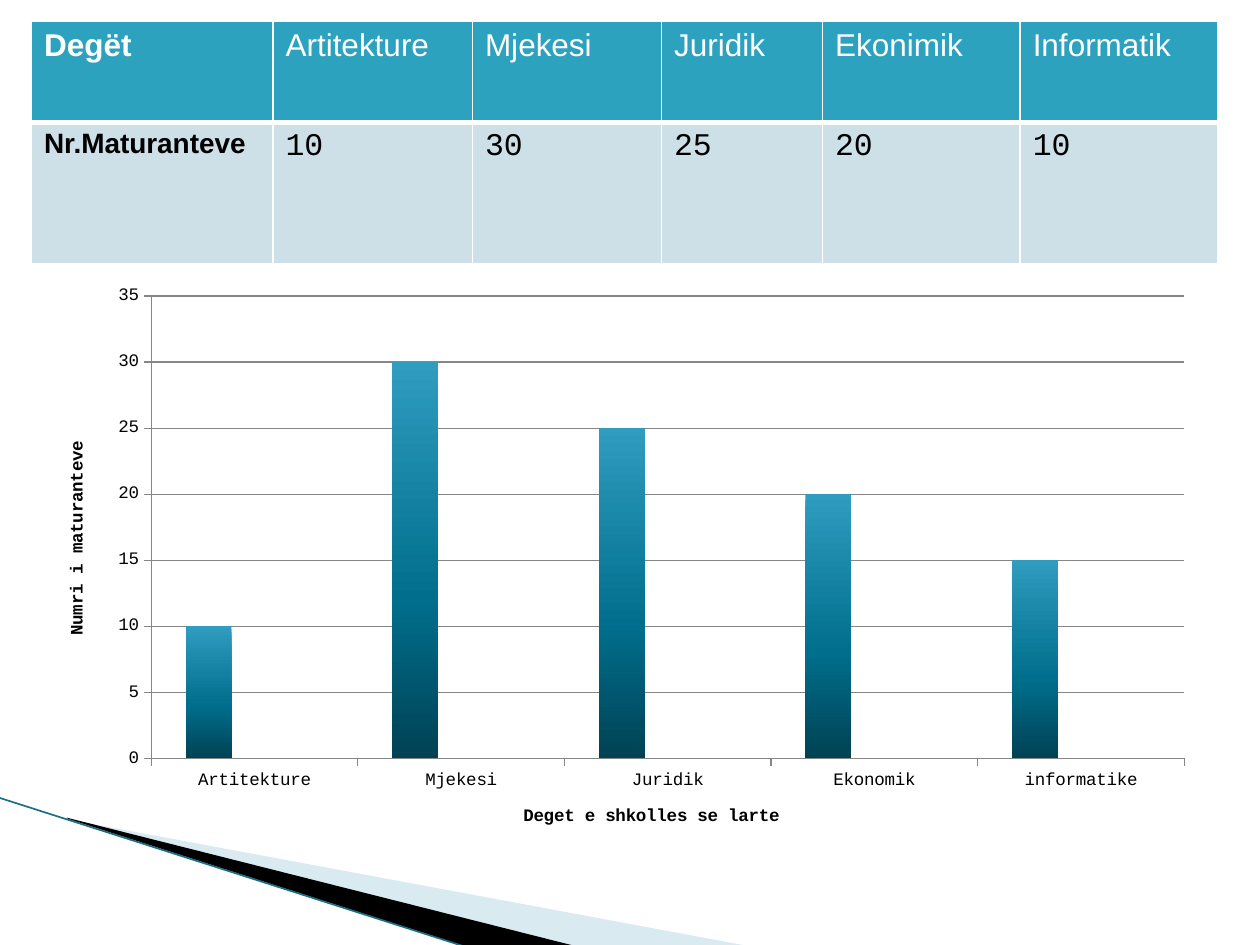
from copy import deepcopy
from dataclasses import dataclass
from typing import Optional

from lxml.etree import SubElement
from pptx import Presentation
from pptx.chart.data import CategoryChartData
from pptx.dml.color import RGBColor
from pptx.enum.chart import XL_CHART_TYPE, XL_TICK_MARK
from pptx.oxml import parse_xml
from pptx.oxml.ns import nsdecls, qn
from pptx.util import Pt


@dataclass(frozen=True)
class Theme:
    accent: str = "2DA2BF"
    band: str = "CDE0E8"
    pale: str = "A0CBDC"
    edge: str = "1B7086"
    dark: str = "000000"
    light: str = "FFFFFF"
    grid: str = "868686"
    bar: tuple = ((0, "2F9CC0"), (0.6, "006E8C"), (1, "004254"))
    spare: tuple = ("DA1F28", "EB641B")
    sans: str = "Arial"
    mono: str = "Courier New"
    table_size: float = 18
    label_size: float = 16
    chart_size: float = 10


@dataclass(frozen=True)
class Wedge:
    points: tuple
    color: str
    alpha: Optional[int] = None


@dataclass(frozen=True)
class Column:
    width: float
    head: str
    value: str


T = Theme()
WEDGES = (
    Wedge(((39.6, 468.4), (428.4, 540.7), (328.3, 540.7), (39.6, 468)), T.pale, 40),
    Wedge(((38.2, 467.3), (329, 540.7), (267.8, 541.4), (38.9, 468)), T.dark),
)
COLUMNS = (
    Column(138, "Degët", "Nr.Maturanteve"),
    Column(114, "Artitekture", "10"),
    Column(108, "Mjekesi", "30"),
    Column(92, "Juridik", "25"),
    Column(113, "Ekonimik", "20"),
    Column(113, "Informatik", "10"),
)
ROW_HEIGHTS = (57.6, 80.6)
BRANCHES = {"Artitekture": 10, "Mjekesi": 30, "Juridik": 25,
            "Ekonomik": 20, "informatike": 15}


def rgb(color: str) -> RGBColor:
    return RGBColor.from_string(color)


def write(tf, text: str, *, size: float, font: str, color: str, bold: bool = False) -> None:
    r = tf.paragraphs[0].add_run()
    r.text = text
    r.font.size, r.font.name, r.font.bold = Pt(size), font, bold
    r.font.color.rgb = rgb(color)


def draw_wedge(s, wedge: Wedge) -> None:
    points = [(Pt(x), Pt(y)) for x, y in wedge.points]
    builder = s.shapes.build_freeform(*points[0], scale=1.0)
    builder.add_line_segments(points[1:], close=True)
    sp = builder.convert_to_shape()
    sp.shadow.inherit = False
    sp.line.fill.background()
    sp.fill.solid()
    sp.fill.fore_color.rgb = rgb(wedge.color)
    if wedge.alpha is not None:
        clr = sp._element.spPr.find(".//" + qn("a:srgbClr"))
        SubElement(clr, qn("a:alpha"), val=str(wedge.alpha * 1000))


def draw_edge(s) -> None:
    line = s.shapes.add_connector(1, Pt(-0.7), Pt(455.8), Pt(267.1), Pt(541.4))
    line.line.color.rgb = rgb(T.edge)
    line.line.width = Pt(0.95)
    SubElement(line._element.spPr, qn("a:effectLst"))


def style_cell(cell, fill: str, top: float, bottom: float) -> None:
    tcPr = cell._tc.get_or_add_tcPr()
    for side, width in (("L", 1), ("R", 1), ("T", top), ("B", bottom)):
        ln = SubElement(tcPr, qn(f"a:ln{side}"), w=str(Pt(width)))
        SubElement(SubElement(ln, qn("a:solidFill")), qn("a:srgbClr"), val=T.light)
    cell.fill.solid()
    cell.fill.fore_color.rgb = rgb(fill)


def draw_table(s) -> None:
    width = sum(c.width for c in COLUMNS)
    table = s.shapes.add_table(2, len(COLUMNS), Pt(18), Pt(12.4),
                               Pt(width), Pt(sum(ROW_HEIGHTS))).table
    for row, height in zip(table.rows, ROW_HEIGHTS):
        row.height = Pt(height)
    for i, column in enumerate(COLUMNS):
        table.columns[i].width = Pt(column.width)
        head, value = table.cell(0, i), table.cell(1, i)
        label = i == 0
        style_cell(head, T.accent, 1, 3)
        style_cell(value, T.band, 3, 1)
        write(head.text_frame, column.head, size=T.table_size, font=T.sans,
              color=T.light, bold=label)
        write(value.text_frame, column.value, color=T.dark, bold=label,
              size=T.label_size if label else T.table_size,
              font=T.sans if label else T.mono)


def fill_bars(fill) -> None:
    fill.gradient()
    fill.gradient_angle = 270
    stops = fill.gradient_stops
    first = stops[0]._gs
    first.addnext(deepcopy(first))
    for stop, (position, color) in zip(fill.gradient_stops, T.bar):
        stop.position = position
        stop.color.rgb = rgb(color)


def style_axis(axis, title: str) -> None:
    write(axis.axis_title.text_frame, title, size=T.chart_size, font=T.mono,
          color=T.dark, bold=True)
    axis.format.line.color.rgb = rgb(T.grid)
    axis.format.line.width = Pt(0.75)
    axis.major_tick_mark = XL_TICK_MARK.OUTSIDE
    axis.minor_tick_mark = XL_TICK_MARK.NONE


def place_plot(chart, x: float, y: float, w: float, h: float) -> None:
    area = chart._chartSpace.chart.plotArea
    for old in area.findall(qn("c:layout")):
        area.remove(old)
    area.insert(0, parse_xml(
        f'<c:layout {nsdecls("c")}><c:manualLayout><c:layoutTarget val="inner"/>'
        '<c:xMode val="edge"/><c:yMode val="edge"/>'
        f'<c:x val="{x}"/><c:y val="{y}"/><c:w val="{w}"/><c:h val="{h}"/>'
        '</c:manualLayout></c:layout>'))


def draw_chart(s) -> None:
    data = CategoryChartData()
    data.categories = list(BRANCHES)
    data.add_series("Series 1", list(BRANCHES.values()))
    for name in ("Series 2", "Series 3"):
        data.add_series(name, [None] * len(BRANCHES))
    chart = s.shapes.add_chart(XL_CHART_TYPE.COLUMN_CLUSTERED, Pt(-36), Pt(156.2),
                               Pt(720), Pt(326.2), data).chart
    chart.has_legend = False
    chart.has_title = False
    chart.font.size, chart.font.name = Pt(T.chart_size), T.mono
    chart.font.color.rgb = rgb(T.dark)
    plot = chart.plots[0]
    plot.gap_width, plot.overlap = 150, 0
    plot.vary_by_categories = False
    bars, *spares = plot.series
    fill_bars(bars.format.fill)
    for series, color in zip(spares, T.spare):
        series.format.fill.solid()
        series.format.fill.fore_color.rgb = rgb(color)
    style_axis(chart.category_axis, "Deget e shkolles se larte")
    axis = chart.value_axis
    style_axis(axis, "Numri i maturanteve")
    axis.minimum_scale, axis.maximum_scale, axis.major_unit = 0, 35, 5
    axis.has_major_gridlines = True
    axis.major_gridlines.format.line.color.rgb = rgb(T.grid)
    axis.major_gridlines.format.line.width = Pt(0.75)
    place_plot(chart, 0.17, 0.04, 0.82, 0.81)


def main() -> None:
    prs = Presentation()
    prs.slide_width, prs.slide_height = Pt(720), Pt(540)
    s = prs.slides.add_slide(prs.slide_layouts[6])
    for wedge in WEDGES:
        draw_wedge(s, wedge)
    draw_edge(s)
    draw_table(s)
    draw_chart(s)
    prs.save("out.pptx")


if __name__ == "__main__":
    main()
